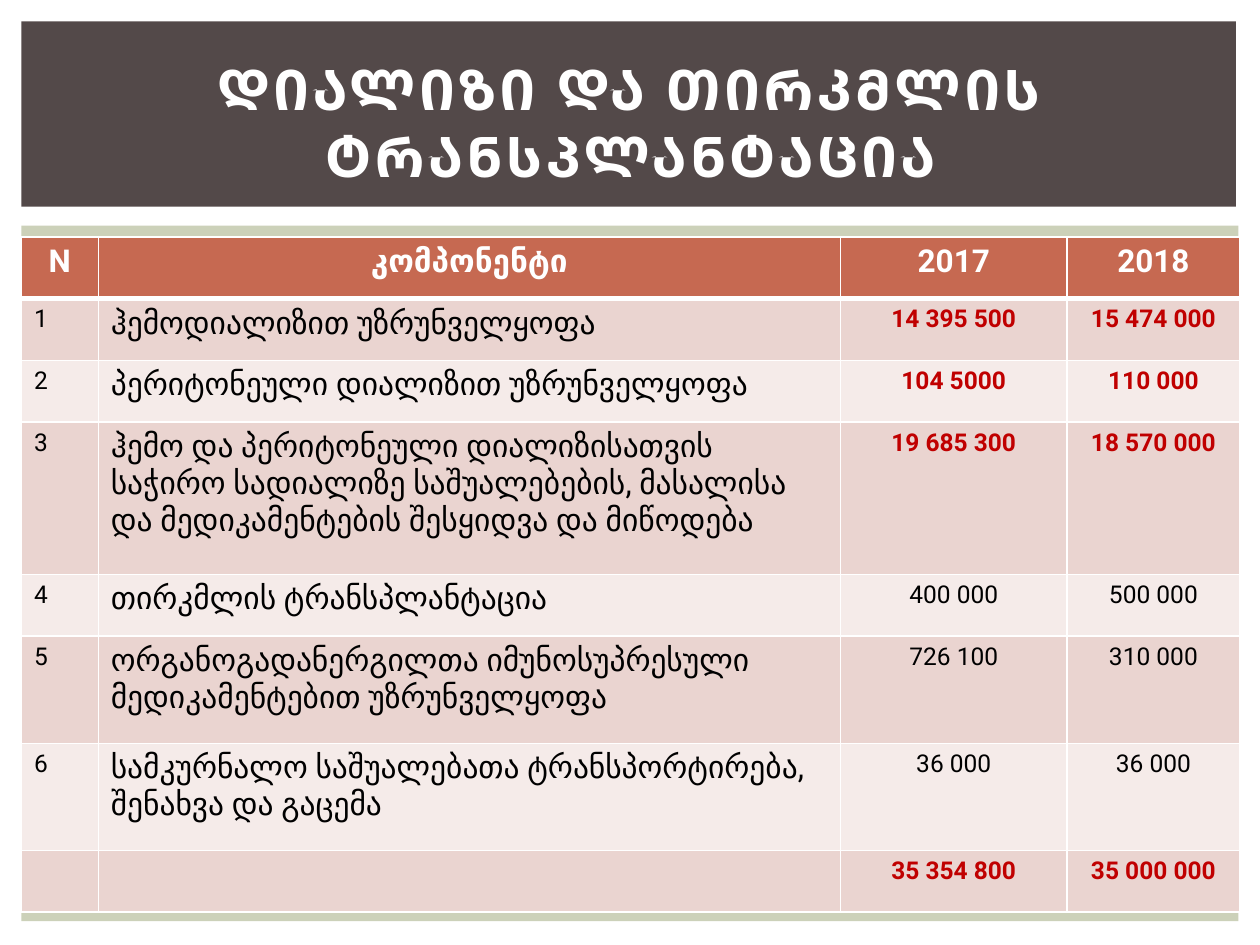
from lxml import etree
from pptx import Presentation
from pptx.dml.color import RGBColor
from pptx.enum.shapes import MSO_SHAPE as Shape
from pptx.enum.text import MSO_ANCHOR as Anchor, PP_ALIGN as Align
from pptx.oxml.ns import qn
from pptx.util import Inches, Pt

TITLE = "ᲓᲘᲐᲚᲘᲖᲘ ᲓᲐ ᲗᲘᲠᲙᲛᲚᲘᲡ ᲢᲠᲐᲜᲡᲞᲚᲐᲜᲢᲐᲪᲘᲐ"
HEADER = ("N", "კომპონენტი", "2017", "2018")
ROWS = [
    ("1", "ჰემოდიალიზით უზრუნველყოფა", "14 395 500", "15 474 000"),
    ("2", "პერიტონეული დიალიზით უზრუნველყოფა", "104 5000", "110 000"),
    ("3", "ჰემო და პერიტონეული დიალიზისათვის საჭირო სადიალიზე საშუალებების, "
          "მასალისა და მედიკამენტების შესყიდვა და მიწოდება", "19 685 300", "18 570 000"),
    ("4", "თირკმლის ტრანსპლანტაცია", "400 000", "500 000"),
    ("5", "ორგანოგადანერგილთა იმუნოსუპრესული მედიკამენტებით უზრუნველყოფა",
     "726 100", "310 000"),
    ("6", "სამკურნალო საშუალებათა ტრანსპორტირება, შენახვა და გაცემა", "36 000", "36 000"),
    ("", "", "35 354 800", "35 000 000"),
]
HIGHLIGHTED_ROWS = (1, 2, 3, 7)
COLUMN_WIDTHS = (0.61, 5.89, 1.8, 1.37)
ROW_HEIGHTS = (0.49, 0.49, 0.49, 1.21, 0.49, 0.85, 0.85, 0.49)
COLORS = {
    "panel": "CCD1B9", "banner": "534949", "header": "C66951",
    "odd": "EAD4D0", "even": "F5EBE9",
    "white": "FFFFFF", "black": "000000", "highlight": "C00000",
}


def color(name):
    return RGBColor.from_string(COLORS[name])


def write(frame, text, size=18, ink="black", bold=False, align=Align.LEFT, spacing=0):
    para = frame.paragraphs[0]
    para.alignment = align
    if not text:
        return
    span = para.add_run()
    span.text = text
    span.font.name = "Roboto"
    span.font.size = Pt(size)
    span.font.bold = bold
    span.font.color.rgb = color(ink)
    if spacing:
        span.font._element.set("spc", str(spacing * 100))


def add_band(page, left, top, width, height, fill):
    band = page.shapes.add_shape(
        Shape.RECTANGLE, Inches(left), Inches(top), Inches(width), Inches(height))
    band.shadow.inherit = False
    band.fill.solid()
    band.fill.fore_color.rgb = color(fill)
    band.line.fill.background()


def add_borders(cell, top=1, bottom=1):
    properties = cell._tc.get_or_add_tcPr()
    sides = (("lnL", 1), ("lnR", 1), ("lnT", top), ("lnB", bottom))
    for position, (side, width) in enumerate(sides):
        border = etree.Element(qn(f"a:{side}"), w=str(Pt(width)))
        fill = etree.SubElement(border, qn("a:solidFill"))
        etree.SubElement(fill, qn("a:srgbClr"), val=COLORS["white"])
        properties.insert(position, border)


def cell_format(row, column):
    if row == 0:
        return dict(ink="white", bold=True, align=Align.CENTER)
    if column == 0:
        return dict(size=14)
    if column == 1:
        return dict(size=18)
    marked = row in HIGHLIGHTED_ROWS
    return dict(size=14, ink="highlight" if marked else "black",
                bold=marked, align=Align.CENTER)


def add_cost_table(page):
    table = page.shapes.add_table(
        len(ROW_HEIGHTS), len(COLUMN_WIDTHS), Inches(0.17), Inches(1.88),
        Inches(sum(COLUMN_WIDTHS)), Inches(sum(ROW_HEIGHTS))).table
    for column, width in zip(table.columns, COLUMN_WIDTHS):
        column.width = Inches(width)
    for row, height in zip(table.rows, ROW_HEIGHTS):
        row.height = Inches(height)
    for row, texts in enumerate([HEADER, *ROWS]):
        fill = "header" if row == 0 else ("even", "odd")[row % 2]
        for column, text in enumerate(texts):
            cell = table.cell(row, column)
            cell.fill.solid()
            cell.fill.fore_color.rgb = color(fill)
            add_borders(cell, top=3 if row == 1 else 1, bottom=3 if row == 0 else 1)
            write(cell.text_frame, text, **cell_format(row, column))


def add_title(page):
    box = page.shapes.add_textbox(Inches(0.42), Inches(0.39), Inches(9.17), Inches(1.15))
    frame = box.text_frame
    frame.word_wrap = True
    frame.vertical_anchor = Anchor.MIDDLE
    write(frame, TITLE, size=32, ink="white", bold=True, align=Align.CENTER, spacing=2)


def main():
    deck = Presentation()
    deck.slide_width, deck.slide_height = Inches(10), Inches(7.5)
    page = deck.slides.add_slide(deck.slide_layouts[6])
    add_band(page, 0.17, 1.79, 9.66, 5.52, "panel")
    add_band(page, 0.17, 0.17, 9.64, 1.47, "banner")
    add_cost_table(page)
    add_title(page)
    deck.save("out.pptx")


if __name__ == "__main__":
    main()
